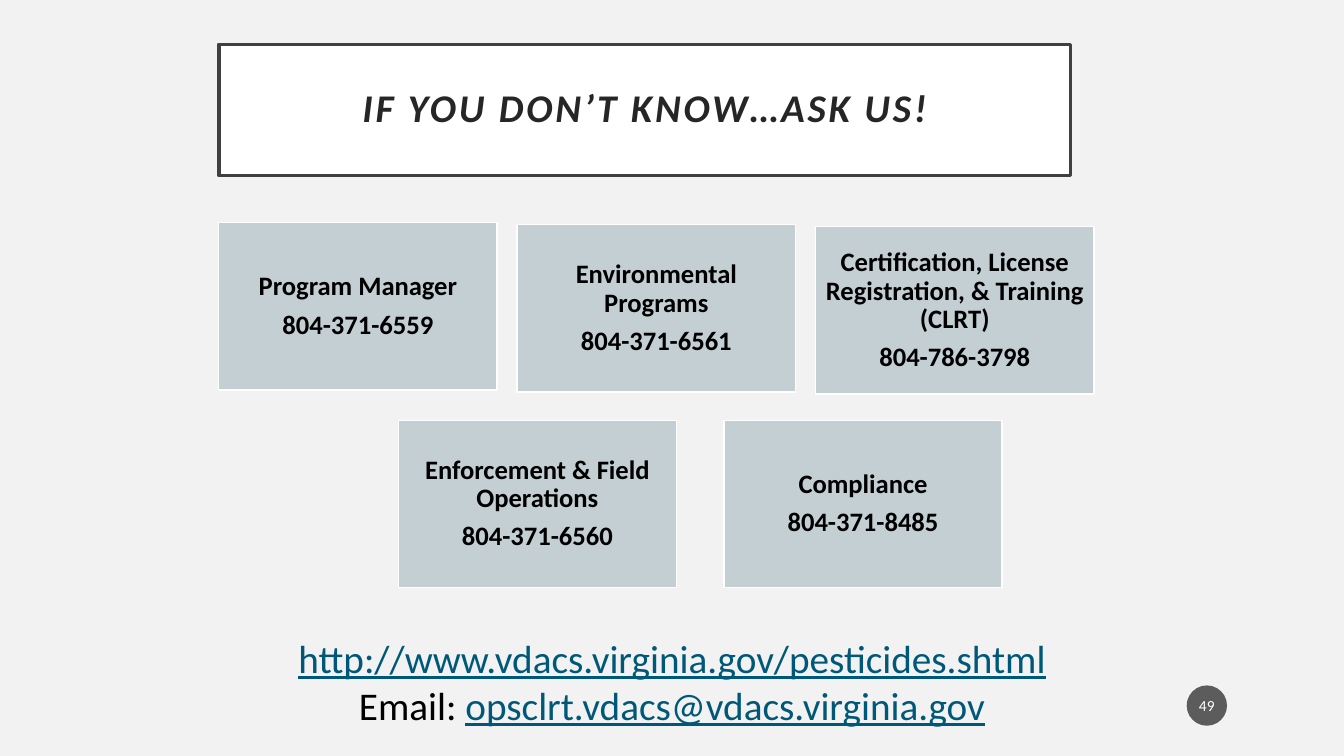
from dataclasses import dataclass

from lxml import etree
from pptx import Presentation
from pptx.dml.color import RGBColor
from pptx.enum.shapes import MSO_SHAPE
from pptx.enum.text import MSO_ANCHOR, PP_ALIGN
from pptx.oxml.ns import qn
from pptx.util import Inches, Pt

RECTANGLE, OVAL = MSO_SHAPE.RECTANGLE, MSO_SHAPE.OVAL
MIDDLE, CENTER = MSO_ANCHOR.MIDDLE, PP_ALIGN.CENTER

# Content
TITLE = "IF YOU DON’T KNOW…ASK US!"
CONTACT_ROWS = [
    [
        ("Program Manager", "804-371-6559"),
        ("Environmental Programs", "804-371-6561"),
        ("Certification, License Registration, & Training (CLRT)", "804-786-3798"),
    ],
    [
        ("Enforcement & Field Operations", "804-371-6560"),
        ("Compliance", "804-371-8485"),
    ],
]
WEBSITE = "http://www.vdacs.virginia.gov/pesticides.shtml"
EMAIL_LABEL, EMAIL = "Email: ", "opsclrt.vdacs@vdacs.virginia.gov"
PAGE_NUMBER = "49"

# Layout in inches: each row has left, top, column step and drop per column
SLIDE_SIZE = (13.33, 7.5)
TITLE_BOX = (2.17, 0.44, 8.45, 1.3)
ROW_GRID = [(2.17, 2.21, 2.96, 0.02), (3.95, 4.17, 3.23, 0)]
CARD_SIZE = (2.76, 1.66)
LINKS_BOX = (1.28, 6.24, 10.77, 1.04)
BADGE_BOX = (11.77, 6.8, 0.4, 0.4)


@dataclass(frozen=True)
class Theme:
    font: str = "Calibri"
    background: str = "F2F2F2"
    white: str = "FFFFFF"
    black: str = "000000"
    title_text: str = "262626"
    title_border: str = "404040"
    card: str = "C3CFD3"
    link: str = "005878"
    badge: str = "1D1D1D"
    badge_opacity: int = 70
    heading_size: int = 28
    card_size: int = 19
    badge_size: int = 11


THEME = Theme()


def color(code):
    return RGBColor.from_string(code)


def place(shape, box):
    shape.left, shape.top, shape.width, shape.height = map(Inches, box)


def paint(shape, fill, border=None, weight=1):
    shape.fill.solid()
    shape.fill.fore_color.rgb = color(fill)
    if border:
        shape.line.color.rgb = color(border)
        shape.line.width = Pt(weight)
    else:
        shape.line.fill.background()


def frame_text(shape, side, vertical):
    frame = shape.text_frame
    frame.word_wrap = True
    frame.vertical_anchor = MIDDLE
    frame.margin_left = frame.margin_right = Inches(side)
    frame.margin_top = frame.margin_bottom = Inches(vertical)
    return frame


def add_para(frame, first, spacing=1.0, after=0):
    para = frame.paragraphs[0] if first else frame.add_paragraph()
    para.alignment = CENTER
    para.line_spacing = spacing
    para.space_before = Pt(0)
    para.space_after = Pt(after)
    return para


def add_span(para, text, size, ink, bold=False, italic=False, underline=False):
    span = para.add_run()
    span.text = text
    font = span.font
    font.name, font.size, font.color.rgb = THEME.font, Pt(size), color(ink)
    font.bold, font.italic, font.underline = bold, italic, underline
    return span


def add_box(page, kind, box):
    shape = page.shapes.add_shape(kind, *map(Inches, box))
    shape.shadow.inherit = False
    return shape


def add_title(page):
    title = page.shapes.title
    place(title, TITLE_BOX)
    paint(title, THEME.white, THEME.title_border, 2.5)
    para = add_para(frame_text(title, 0.2, 0.2), True, 0.9)
    span = add_span(para, TITLE, THEME.heading_size, THEME.title_text, True, True)
    span.font._element.set("spc", "200")  # letter spacing of 2 points


def add_card(page, box, lines):
    card = add_box(page, RECTANGLE, box)
    paint(card, THEME.card, THEME.white)
    frame = frame_text(card, 0.08, 0.08)
    for index, line in enumerate(lines):
        para = add_para(frame, index == 0, 0.9, 0.35 * THEME.card_size)
        add_span(para, line, THEME.card_size, THEME.black, bold=True)


def add_links(page):
    links = page.shapes.add_textbox(*map(Inches, LINKS_BOX))
    frame = frame_text(links, 0.1, 0.05)
    size = THEME.heading_size
    add_span(add_para(frame, True), WEBSITE, size, THEME.link, underline=True)
    para = add_para(frame, False)
    add_span(para, EMAIL_LABEL, size, THEME.black)
    add_span(para, EMAIL, size, THEME.link, underline=True)


def add_badge(page):
    badge = add_box(page, OVAL, BADGE_BOX)
    paint(badge, THEME.badge)
    tint = badge._element.spPr.find(qn("a:solidFill"))[0]
    etree.SubElement(tint, qn("a:alpha")).set("val", str(THEME.badge_opacity * 1000))
    para = add_para(frame_text(badge, 0.02, 0.05), True)
    add_span(para, PAGE_NUMBER, THEME.badge_size, THEME.white)


def main():
    deck = Presentation()
    deck.slide_width, deck.slide_height = map(Inches, SLIDE_SIZE)
    page = deck.slides.add_slide(deck.slide_layouts.get_by_name("Title Only"))
    page.background.fill.solid()
    page.background.fill.fore_color.rgb = color(THEME.background)

    add_title(page)
    # Contact cards
    for contacts, (left, top, step, drop) in zip(CONTACT_ROWS, ROW_GRID):
        for column, contact in enumerate(contacts):
            corner = (left + column * step, top + column * drop)
            add_card(page, corner + CARD_SIZE, contact)
    add_links(page)
    add_badge(page)
    deck.save("out.pptx")


if __name__ == "__main__":
    main()
